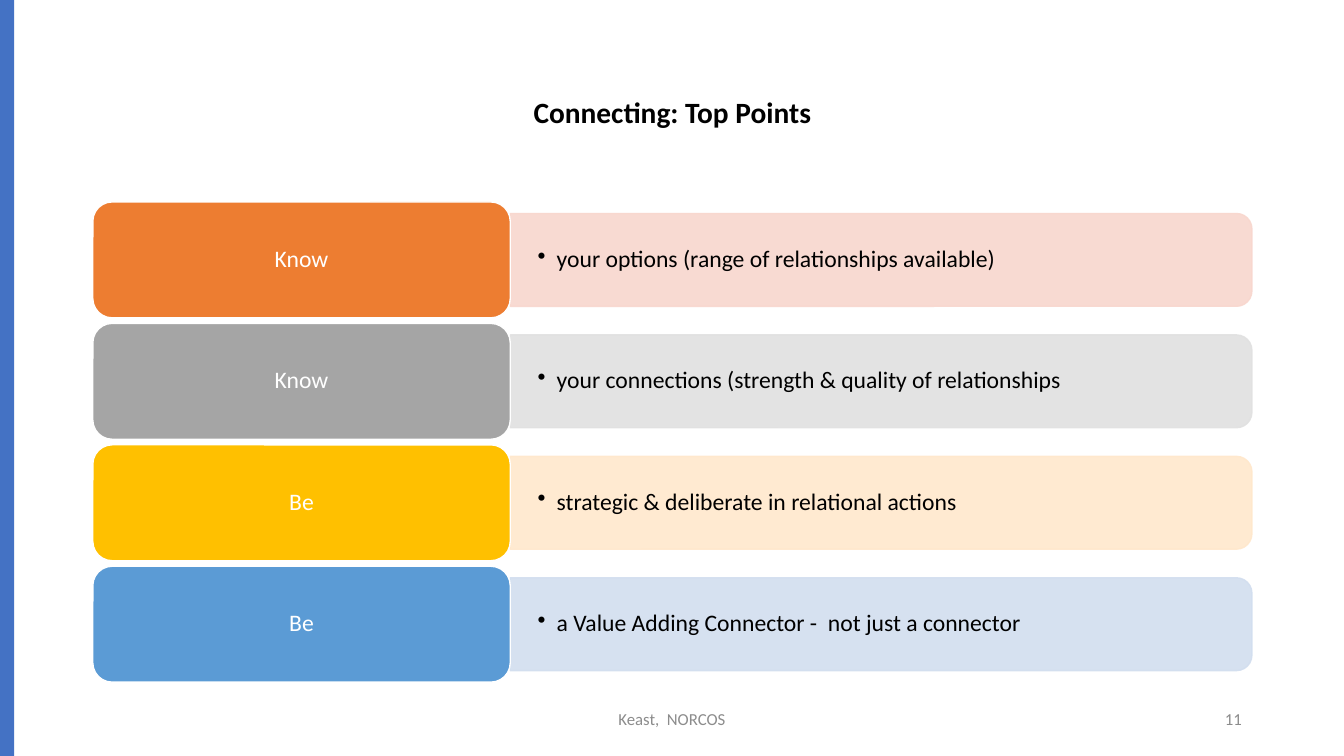
from lxml import etree
from pptx import Presentation
from pptx.dml.color import RGBColor
from pptx.enum.shapes import MSO_SHAPE
from pptx.enum.text import MSO_ANCHOR, PP_ALIGN
from pptx.oxml.ns import qn
from pptx.util import Cm, Pt

COLORS = {
    "black": "000000",
    "white": "FFFFFF",
    "footer": "8C8C8C",
    "stripe": "4472C4",
    "orange": "ED7D31",
    "orange_tint": "F8D7CE",
    "gray": "A5A5A5",
    "gray_tint": "E1E1E1",
    "gold": "FFC000",
    "gold_tint": "FFE8CC",
    "blue": "5B9BD5",
    "blue_tint": "D2DEEF",
}

POINTS = [
    ("Know", "your options (range of relationships available)", "orange"),
    ("Know", "your connections (strength & quality of relationships", "gray"),
    ("Be", "strategic & deliberate in relational actions", "gold"),
    ("Be", "a Value Adding Connector -  not just a connector", "blue"),
]

LEFT, TOP = Cm(2.34), Cm(5.09)
LABEL_W, LABEL_H = Cm(10.52), Cm(2.92)
BAR_W, BAR_H = Cm(18.69), Cm(2.34)
DETAIL_W = Cm(18.59)
ROW_PITCH = Cm(3.06)
POINT_SIZE = 16.9


def rgb(name):
    return RGBColor.from_string(COLORS[name])


def write(sp, text, size, color, align, anchor=MSO_ANCHOR.MIDDLE, bold=False):
    """Set the one paragraph of a shape and return it."""
    tf = sp.text_frame
    tf.word_wrap = True
    tf.vertical_anchor = anchor
    tf.text = text
    p = tf.paragraphs[0]
    p.alignment = align
    p.line_spacing = 0.9
    font = p.runs[0].font
    font.name = "Calibri"
    font.size = Pt(size)
    font.bold = bold
    font.color.rgb = rgb(color)
    return p


def add_block(s, kind, left, top, width, height, fill, line=None):
    sp = s.shapes.add_shape(kind, left, top, width, height)
    sp.shadow.inherit = False
    sp.fill.solid()
    sp.fill.fore_color.rgb = rgb(fill)
    if line:
        sp.line.color.rgb = rgb(line)
        sp.line.width = Pt(1)
    else:
        sp.line.fill.background()
    return sp


def soften(sp):
    """Make fill and line 90% opaque."""
    for color in sp.fill._xPr.iter(qn("a:srgbClr")):
        etree.SubElement(color, qn("a:alpha")).set("val", "90000")


def add_bullet(p, indent):
    pPr = p._p.get_or_add_pPr()
    pPr.set("marL", str(indent))
    pPr.set("indent", str(-indent))
    etree.SubElement(pPr, qn("a:buChar")).set("char", "•")


def add_title(s, text):
    title = s.shapes.title
    title.left, title.top = LEFT, Cm(2.29)
    title.width, title.height = Cm(29.21), Cm(3.68)
    write(title, text, 21, "black", PP_ALIGN.CENTER, MSO_ANCHOR.TOP, bold=True)
    title.text_frame.margin_top = Cm(0.18)


def add_point(s, top, label, detail, color):
    """Draw a tinted bar with its bullet, then the label block over its end."""
    middle = top + LABEL_H // 2
    bar_left = LEFT + LABEL_W
    tint = f"{color}_tint"
    bar = add_block(s, MSO_SHAPE.ROUND_2_SAME_RECTANGLE,
                    bar_left + (BAR_W - BAR_H) // 2, middle - BAR_W // 2,
                    BAR_H, BAR_W, tint, tint)
    bar.rotation = 90
    soften(bar)

    box = s.shapes.add_textbox(bar_left, middle - BAR_H // 2, DETAIL_W, BAR_H)
    box.text_frame.margin_left = box.text_frame.margin_right = Cm(0.69)
    p = write(box, detail, POINT_SIZE, "black", PP_ALIGN.LEFT)
    add_bullet(p, Cm(0.48))

    block = add_block(s, MSO_SHAPE.ROUNDED_RECTANGLE, LEFT, top,
                      LABEL_W, LABEL_H, color, "white")
    write(block, label, POINT_SIZE, "white", PP_ALIGN.CENTER)


def add_footer(s, text, left, width, align):
    box = s.shapes.add_textbox(left, Cm(17.65), width, Cm(1.01))
    write(box, text, 12, "footer", align)


def main():
    prs = Presentation()
    prs.slide_width, prs.slide_height = Cm(33.87), Cm(19.05)
    s = prs.slides.add_slide(prs.slide_layouts[5])

    add_title(s, "Connecting: Top Points")
    add_block(s, MSO_SHAPE.RECTANGLE, 0, 0, Cm(0.36), prs.slide_height, "stripe")
    add_footer(s, "Keast,  NORCOS", Cm(11.22), Cm(11.43), PP_ALIGN.CENTER)
    add_footer(s, "11", Cm(23.93), Cm(7.62), PP_ALIGN.RIGHT)
    for row, (label, detail, color) in enumerate(POINTS):
        add_point(s, TOP + row * ROW_PITCH, label, detail, color)

    prs.save("out.pptx")


if __name__ == "__main__":
    main()
